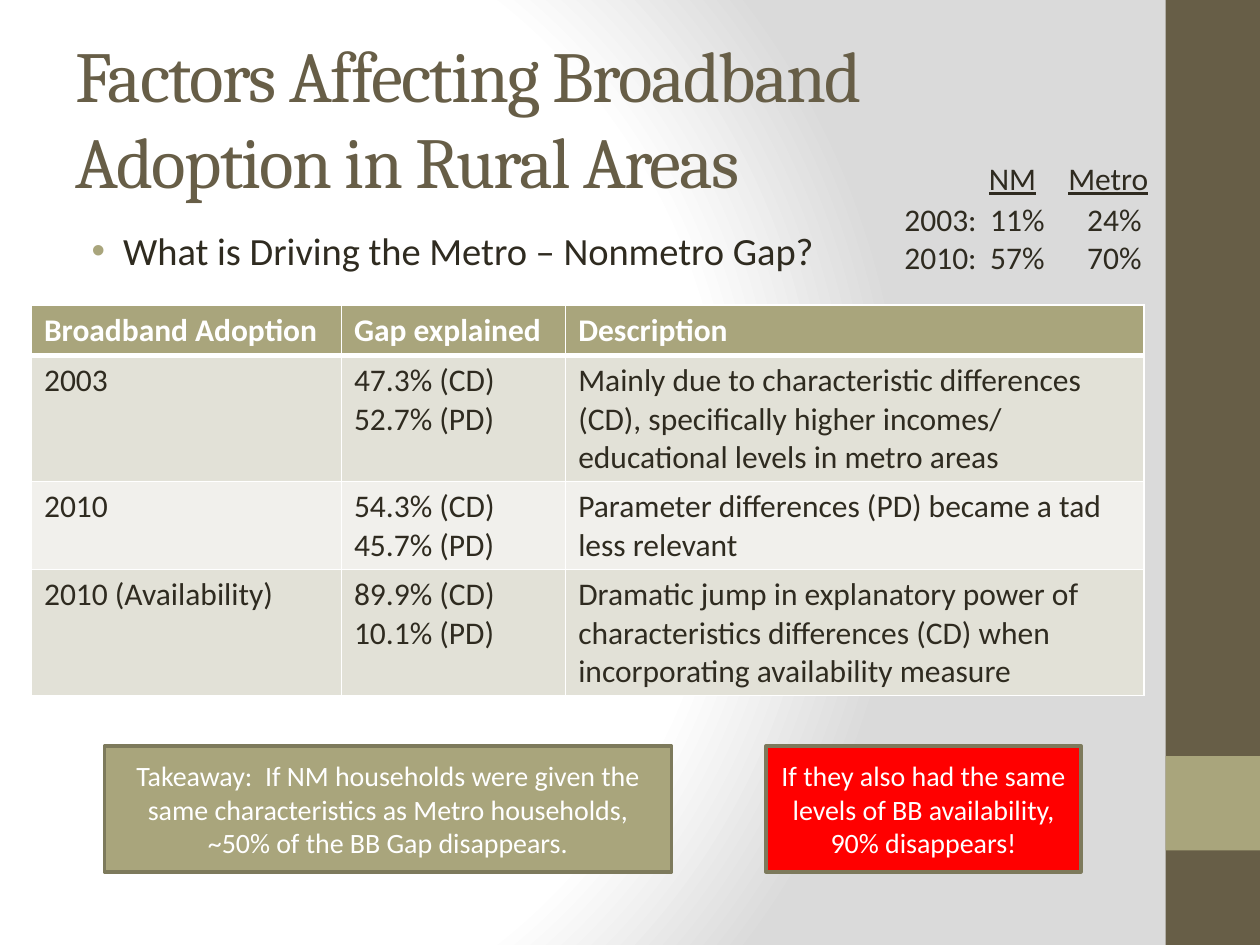
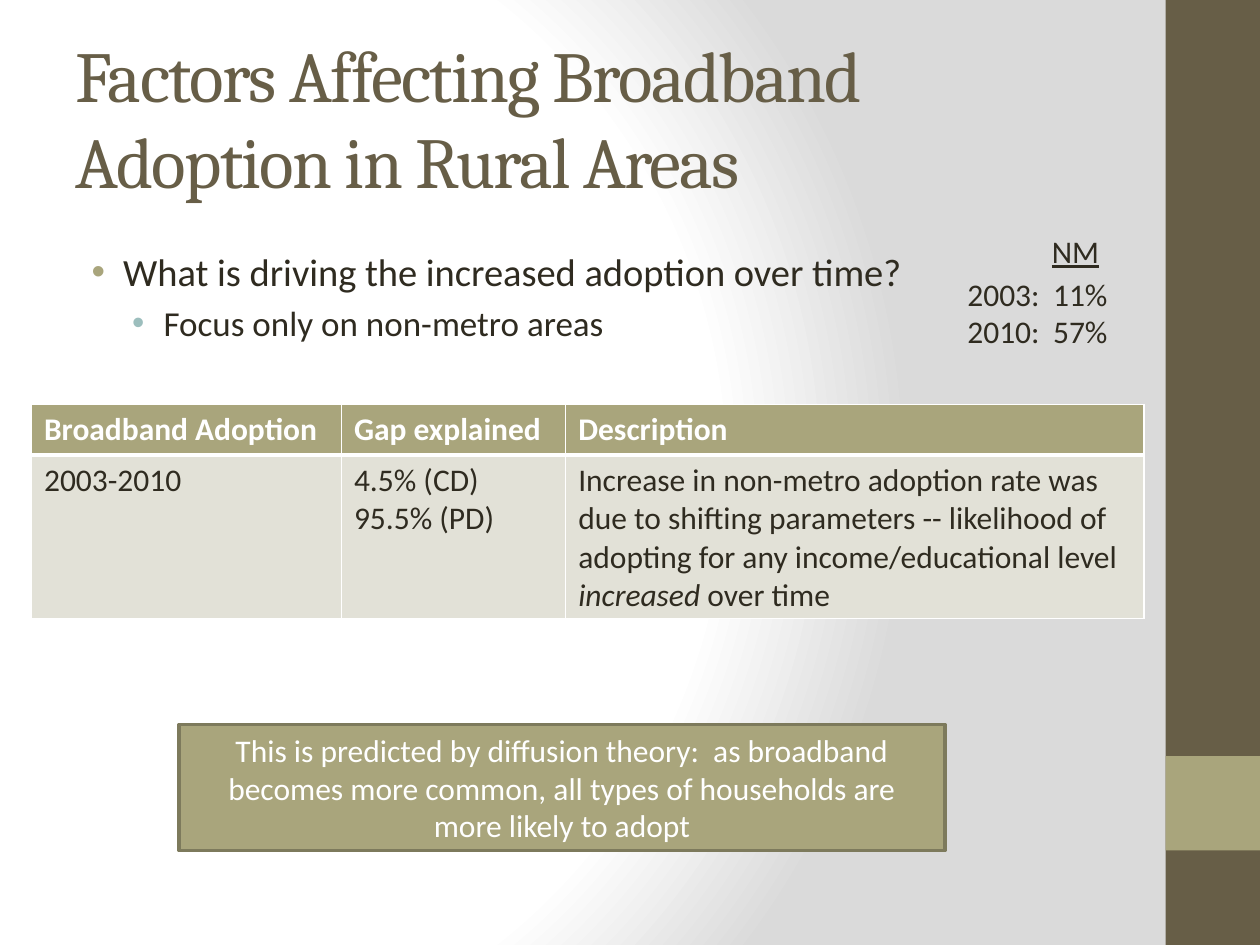
"""Build two slides on what drives broadband adoption in rural areas."""
from dataclasses import dataclass

from lxml import etree
from pptx import Presentation
from pptx.dml.color import RGBColor
from pptx.enum.shapes import MSO_SHAPE
from pptx.enum.text import MSO_ANCHOR, MSO_AUTO_SIZE, PP_ALIGN
from pptx.oxml import parse_xml
from pptx.oxml.ns import nsdecls, qn
from pptx.util import Inches, Pt

RECTANGLE = MSO_SHAPE.RECTANGLE
MIDDLE, TOP = MSO_ANCHOR.MIDDLE, MSO_ANCHOR.TOP
LEFT, CENTER = PP_ALIGN.LEFT, PP_ALIGN.CENTER
NO_AUTOFIT = MSO_AUTO_SIZE.NONE
TITLE_ONLY = 5


@dataclass(frozen=True)
class Theme:
    """Colours, fonts and type sizes."""
    ink: str = "2F2B20"
    brown: str = "675E47"
    olive: str = "A9A57C"
    olive_edge: str = "7D7A5C"
    teal: str = "9CBEBD"
    red: str = "FF0000"
    white: str = "FFFFFF"
    gray: str = "DADADA"
    row_fills: tuple = ("E2E1D7", "F1F0EC")
    heading_font: str = "Cambria"
    body_font: str = "Calibri"
    title_size: int = 41
    bullet_sizes: tuple = (22, 20)
    text_size: int = 18
    small_size: int = 16


THEME = Theme()
TITLE = "Factors Affecting Broadband\vAdoption in Rural Areas"
TABLE_HEADER = ("Broadband Adoption", "Gap explained", "Description")
COLUMN_WIDTHS = (2.46, 1.78, 4.59)
TABLE_LEFT = 0.25
FIRST_LINE_HEIGHT, NEXT_LINE_HEIGHT = 0.4, 0.3
RATE_TABS = (0.68, 1.45)
BANDS = ((0, 7.5, THEME.brown), (6, 0.75, THEME.olive))
BULLET_INDENTS = (0.38, 0.7)
BULLET_COLORS = (THEME.olive, THEME.teal)

SLIDES = [
    {
        "bullets_top": 1.75,
        "bullets": ["What is Driving the Metro – Nonmetro Gap?"],
        "table_top": 2.42,
        "rows": [
            (3, "2003", "47.3% (CD)\n52.7% (PD)",
             "Mainly due to characteristic differences (CD), specifically "
             "higher incomes/ educational levels in metro areas"),
            (2, "2010", "54.3% (CD)\n45.7% (PD)",
             "Parameter differences (PD) became a tad less relevant"),
            (3, "2010 (Availability)", "89.9% (CD)\n10.1% (PD)",
             "Dramatic jump in explanatory power of characteristics "
             "differences (CD) when incorporating availability measure"),
        ],
        "callouts": [
            ("Takeaway:  If NM households were given the same characteristics "
             "as Metro households, ~50% of the BB Gap disappears.",
             (0.83, 5.92, 4.5, 1), THEME.olive, THEME.small_size),
            ("If they also had the same levels of BB availability, "
             "90% disappears!",
             (6.08, 5.92, 2.5, 1), THEME.red, THEME.small_size),
        ],
        "rates": ("2003:\t11%\t24%\n2010:\t57%\t70%", (7.08, 1.54, 2.58, 0.71)),
        "rate_labels": [("NM", (7.75, 1.21, 0.62, 0.4)),
                        ("Metro", (8.38, 1.21, 1.12, 0.4))],
    },
    {
        "bullets_top": 1.92,
        "bullets": ["What is driving the increased adoption over time?",
                    "Focus only on non-metro areas"],
        "table_top": 3.21,
        "rows": [
            (4, "2003-2010", "4.5% (CD)\n95.5% (PD)",
             "Increase in non-metro adoption rate was due to shifting "
             "parameters -- likelihood of adopting for any "
             "income/educational level *increased* over time"),
        ],
        "callouts": [
            ("This is predicted by diffusion theory:  as broadband becomes "
             "more common, all types of households are more likely to adopt",
             (1.42, 5.75, 6.08, 1), THEME.olive, THEME.text_size),
        ],
        "rates": ("2003:\t11%\n2010:\t57%", (7.58, 2.13, 1.5, 0.71)),
        "rate_labels": [("NM", (8.25, 1.79, 0.62, 0.4))],
    },
]


def rgb(color):
    """Turn a hex string into a colour."""
    return RGBColor.from_string(color)


def style(run, size=THEME.text_size, color=THEME.ink, font=THEME.body_font,
          bold=False):
    """Format one run."""
    run.font.name, run.font.size, run.font.bold = font, Pt(size), bold
    run.font.color.rgb = rgb(color)


def write(frame, text, align=LEFT, **look):
    """Write lines into a frame, with *starred* words in italics."""
    frame.word_wrap = True
    frame.text = text.replace("*", "")
    for paragraph, line in zip(frame.paragraphs, text.split("\n")):
        paragraph.alignment = align
        if "*" in line:
            paragraph.clear()
            for index, part in enumerate(line.split("*")):
                run = paragraph.add_run()
                run.text, run.font.italic = part, index % 2 == 1
        for run in paragraph.runs:
            style(run, **look)


def add_text(slide, text, box):
    """Add a text box and return its frame."""
    frame = slide.shapes.add_textbox(*map(Inches, box)).text_frame
    write(frame, text)
    return frame


def add_box(slide, box, fill, edge=None):
    """Add a flat rectangle."""
    rectangle = slide.shapes.add_shape(RECTANGLE, *map(Inches, box))
    rectangle.shadow.inherit = False
    rectangle.fill.solid()
    rectangle.fill.fore_color.rgb = rgb(fill)
    if edge:
        rectangle.line.color.rgb = rgb(edge)
        rectangle.line.width = Pt(2)
    else:
        rectangle.line.fill.background()
    return rectangle


def set_background(master):
    """Give the master its radial gradient."""
    master.background.fill.gradient()
    gradient = master.element.find(".//" + qn("a:gradFill"))
    stops = "".join(
        f'<a:gs pos="{place * 1000}"><a:srgbClr val="{color}"/></a:gs>'
        for place, color in ((0, THEME.white), (75, THEME.white),
                             (100, THEME.gray)))
    gradient.getparent().replace(gradient, parse_xml(
        f'<a:gradFill {nsdecls("a")} rotWithShape="1"><a:gsLst>{stops}</a:gsLst>'
        '<a:path path="circle"><a:fillToRect l="20000" t="50000" r="100000" '
        'b="50000"/></a:path></a:gradFill>'))


def add_title(slide):
    """Place and format the title."""
    title = slide.shapes.title
    title.left, title.top, title.width, title.height = map(
        Inches, (0.5, 0.3, 8.33, 1.25))
    frame = title.text_frame
    write(frame, TITLE, size=THEME.title_size, color=THEME.brown,
          font=THEME.heading_font)
    frame.auto_size, frame.vertical_anchor = NO_AUTOFIT, MIDDLE
    for run in frame.paragraphs[0].runs:
        run.font._element.set("spc", "-100")


def add_bullets(slide, bullets, top):
    """Add one bullet per level."""
    frame = add_text(slide, "\n".join(bullets), (0.5, top, 8.33, 1))
    levels = zip(frame.paragraphs, THEME.bullet_sizes, BULLET_INDENTS,
                 BULLET_COLORS)
    for level, (paragraph, size, indent, color) in enumerate(levels):
        paragraph.level = level
        paragraph.space_before = Pt(size * 0.2)
        paragraph.runs[0].font.size = Pt(size)
        properties = paragraph._p.get_or_add_pPr()
        properties.set("marL", str(Inches(indent)))
        properties.set("indent", str(Inches(-0.25)))
        bullet_color = etree.SubElement(properties, qn("a:buClr"))
        etree.SubElement(bullet_color, qn("a:srgbClr"), val=color)
        etree.SubElement(properties, qn("a:buFont"), typeface="Arial")
        etree.SubElement(properties, qn("a:buChar"), char="•")


def set_borders(cell, top, bottom):
    """Draw white cell borders of the given widths."""
    properties = cell._tc.get_or_add_tcPr()
    for side, width in (("L", 1), ("R", 1), ("T", top), ("B", bottom)):
        line = etree.SubElement(properties, qn("a:ln" + side),
                                w=str(Pt(width)))
        paint = etree.SubElement(line, qn("a:solidFill"))
        etree.SubElement(paint, qn("a:srgbClr"), val=THEME.white)


def add_gap_table(slide, rows, top):
    """Add the table of explained gaps."""
    rows = [(1, *TABLE_HEADER), *rows]
    heights = [FIRST_LINE_HEIGHT + NEXT_LINE_HEIGHT * (row[0] - 1)
               for row in rows]
    table = slide.shapes.add_table(
        len(rows), len(COLUMN_WIDTHS), Inches(TABLE_LEFT), Inches(top),
        Inches(sum(COLUMN_WIDTHS)), Inches(sum(heights))).table
    for column, width in zip(table.columns, COLUMN_WIDTHS):
        column.width = Inches(width)
    for r, (_, *texts) in enumerate(rows):
        table.rows[r].height = Inches(heights[r])
        header = r == 0
        for c, text in enumerate(texts):
            cell = table.cell(r, c)
            cell.vertical_anchor = TOP
            write(cell.text_frame, text, bold=header,
                  color=THEME.white if header else THEME.ink)
            set_borders(cell, 3 if r == 1 else 1, 3 if header else 1)
            cell.fill.solid()
            cell.fill.fore_color.rgb = rgb(
                THEME.olive if header else THEME.row_fills[(r - 1) % 2])


def add_rates(slide, rates, labels):
    """Add adoption rates by year under underlined labels."""
    for paragraph in add_text(slide, *rates).paragraphs:
        stops = etree.SubElement(paragraph._p.get_or_add_pPr(),
                                 qn("a:tabLst"))
        for position in RATE_TABS:
            etree.SubElement(stops, qn("a:tab"), pos=str(Inches(position)),
                             algn="l")
    for label in labels:
        frame = add_text(slide, *label)
        frame.paragraphs[0].runs[0].font.underline = True


def main():
    """Build and save the slides."""
    deck = Presentation()
    deck.slide_width, deck.slide_height = Inches(10), Inches(7.5)
    set_background(deck.slide_master)
    for content in SLIDES:
        slide = deck.slides.add_slide(deck.slide_layouts[TITLE_ONLY])
        for top, height, color in BANDS:
            add_box(slide, (9.25, top, 0.75, height), color)
        add_title(slide)
        add_bullets(slide, content["bullets"], content["bullets_top"])
        add_gap_table(slide, content["rows"], content["table_top"])
        for text, box, fill, size in content["callouts"]:
            callout = add_box(slide, box, fill, THEME.olive_edge)
            callout.text_frame.vertical_anchor = MIDDLE
            write(callout.text_frame, text, align=CENTER, size=size,
                  color=THEME.white)
        add_rates(slide, content["rates"], content["rate_labels"])
    deck.save("out.pptx")


if __name__ == "__main__":
    main()
